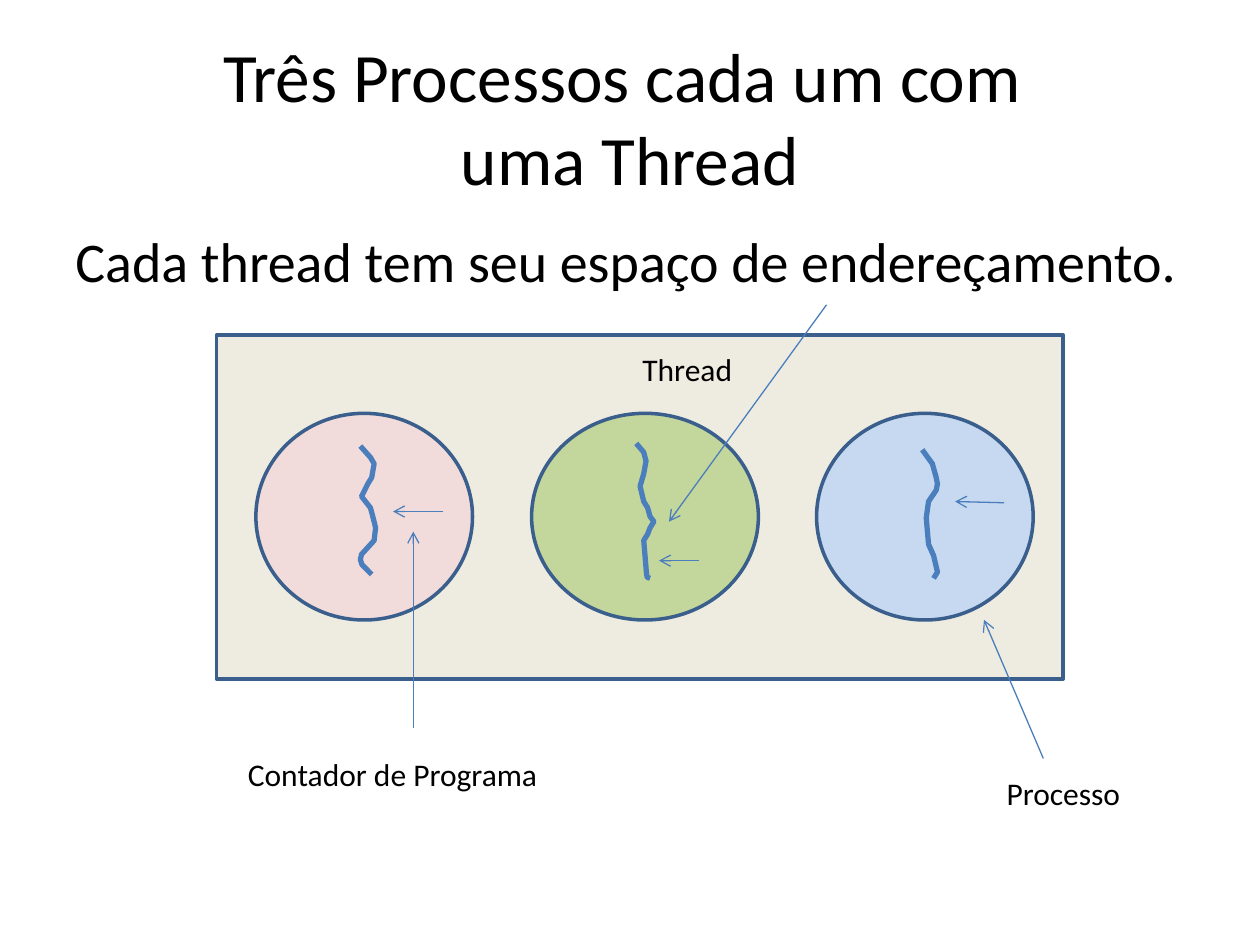
"""Slide with three processes, each holding a single thread."""
from lxml import etree
from pptx import Presentation
from pptx import util as u
from pptx.dml.color import RGBColor
from pptx.enum import shapes, text
from pptx.oxml.ns import qn

BLACK = RGBColor(0x00, 0x00, 0x00)
NAVY = RGBColor(0x3A, 0x5F, 0x8C)
BLUE = RGBColor(0x4B, 0x7E, 0xBC)
CREAM = RGBColor(0xEE, 0xEC, 0xE1)
GREEN = RGBColor(0xC3, 0xD6, 0x9B)
PINK = RGBColor(0xF2, 0xDC, 0xDB)
SKY = RGBColor(0xC6, 0xD9, 0xF1)

PROCESSES = [(303.8, 129.6, GREEN), (146.2, 123.8, PINK), (466.6, 123.8, SKY)]

THREADS = [
    [(205.9, 254.9), (211.7, 261.4), (213.8, 265), (212.4, 272.9), (210.2, 276.5),
     (206.6, 283.7), (211.7, 290.2), (213.8, 298.1), (214.6, 301.7), (213.8, 308.9),
     (206.6, 316.8), (205.9, 319.7), (206.8, 322.6), (212.4, 328.3)],
    [(363.6, 253.4), (367.9, 258.5), (369.2, 263.5), (367.9, 270.7), (365.8, 277.9),
     (367.9, 286.6), (370.1, 290.2), (371.5, 295.2), (373.7, 298.1), (371.5, 301.7),
     (370.1, 305.3), (367.9, 308.9), (369.4, 326.9), (369.8, 329.9), (371.5, 330.5)],
    [(527, 257), (532.8, 265), (535, 272.9), (535.7, 276.5), (535, 280.1),
     (530.6, 286.6), (529.3, 296), (530.6, 311), (533.5, 317.5), (535.7, 326.9),
     (533.5, 330.5)],
]

ARROWS = [
    ((253.4, 292.3), (224.6, 292.3)),
    ((236.2, 416.2), (236.2, 303.8)),
    ((472.3, 174.2), (382.3, 298.1)),
    ((596.2, 433.4), (562.3, 354.2)),
    ((399.6, 320.4), (376.6, 320.4)),
    ((573.8, 287.3), (545.8, 286.6)),
]

LABELS = [
    ("Contador de Programa", 134.6, 427.7, 196.6),
    ("Thread", 360, 196.6, 67.7),
    ("Processo", 568.1, 438.5, 90),
]


class Sketch:
    """Draws styled elements on one slide."""

    font = "Calibri"

    def __init__(self, page):
        self.page = page

    def label(self, lines, left, top, width, height, size, centred=False, hanging=False):
        box = self.page.shapes.add_textbox(u.Pt(left), u.Pt(top), u.Pt(width), u.Pt(height))
        frame = box.text_frame
        frame.word_wrap = True
        para = frame.paragraphs[0]
        if centred:
            frame.vertical_anchor = text.MSO_ANCHOR.MIDDLE
            para.alignment = text.PP_ALIGN.CENTER
        if hanging:
            para.space_before = u.Pt(size * 0.2)
            props = para._p.get_or_add_pPr()
            props.set("marL", str(u.Pt(27)))
            props.set("indent", str(u.Pt(-27)))
        for index, line in enumerate(lines):
            if index:
                para.add_line_break()
            span = para.add_run()
            span.text = line
            span.font.name = self.font
            span.font.size = u.Pt(size)
            span.font.color.rgb = BLACK

    def shape(self, kind, left, top, width, height, fill):
        item = self.page.shapes.add_shape(
            kind, u.Pt(left), u.Pt(top), u.Pt(width), u.Pt(height))
        item.shadow.inherit = False
        item.fill.solid()
        item.fill.fore_color.rgb = fill
        self.stroke(item, NAVY, 2)

    def thread(self, points):
        start, *rest = [(u.Pt(x), u.Pt(y)) for x, y in points]
        builder = self.page.shapes.build_freeform(*start)
        builder.add_line_segments(rest, close=False)
        item = builder.convert_to_shape()
        item.shadow.inherit = False
        item.fill.background()
        self.stroke(item, BLUE, 3)

    def arrow(self, start, end):
        item = self.page.shapes.add_connector(
            shapes.MSO_CONNECTOR.STRAIGHT, *(u.Pt(value) for value in start + end))
        self.stroke(item, BLUE, 0.75)
        etree.SubElement(item.line._get_or_add_ln(), qn("a:tailEnd"), type="arrow")
        etree.SubElement(item._element.spPr, qn("a:effectLst"))

    def stroke(self, item, color, width):
        item.line.color.rgb = color
        item.line.width = u.Pt(width)


def main():
    deck = Presentation()
    deck.slide_width, deck.slide_height = u.Pt(720), u.Pt(540)
    sketch = Sketch(deck.slides.add_slide(deck.slide_layouts[6]))
    sketch.label(["Três Processos cada um com ", "uma Thread"],
                 36, 21.6, 648, 90, 39.6, centred=True)
    sketch.label(["Cada thread tem seu espaço de endereçamento."],
                 36, 126, 648, 356.4, 32, hanging=True)
    sketch.shape(shapes.MSO_SHAPE.RECTANGLE, 123.8, 191.5, 483.8, 196.6, CREAM)
    for left, width, fill in PROCESSES:
        sketch.shape(shapes.MSO_SHAPE.OVAL, left, 236.2, width, 118.1, fill)
    for points in THREADS:
        sketch.thread(points)
    for start, end in ARROWS:
        sketch.arrow(start, end)
    for caption, left, top, width in LABELS:
        sketch.label([caption], left, top, width, 28.8, 18)
    deck.save("out.pptx")


if __name__ == "__main__":
    main()
